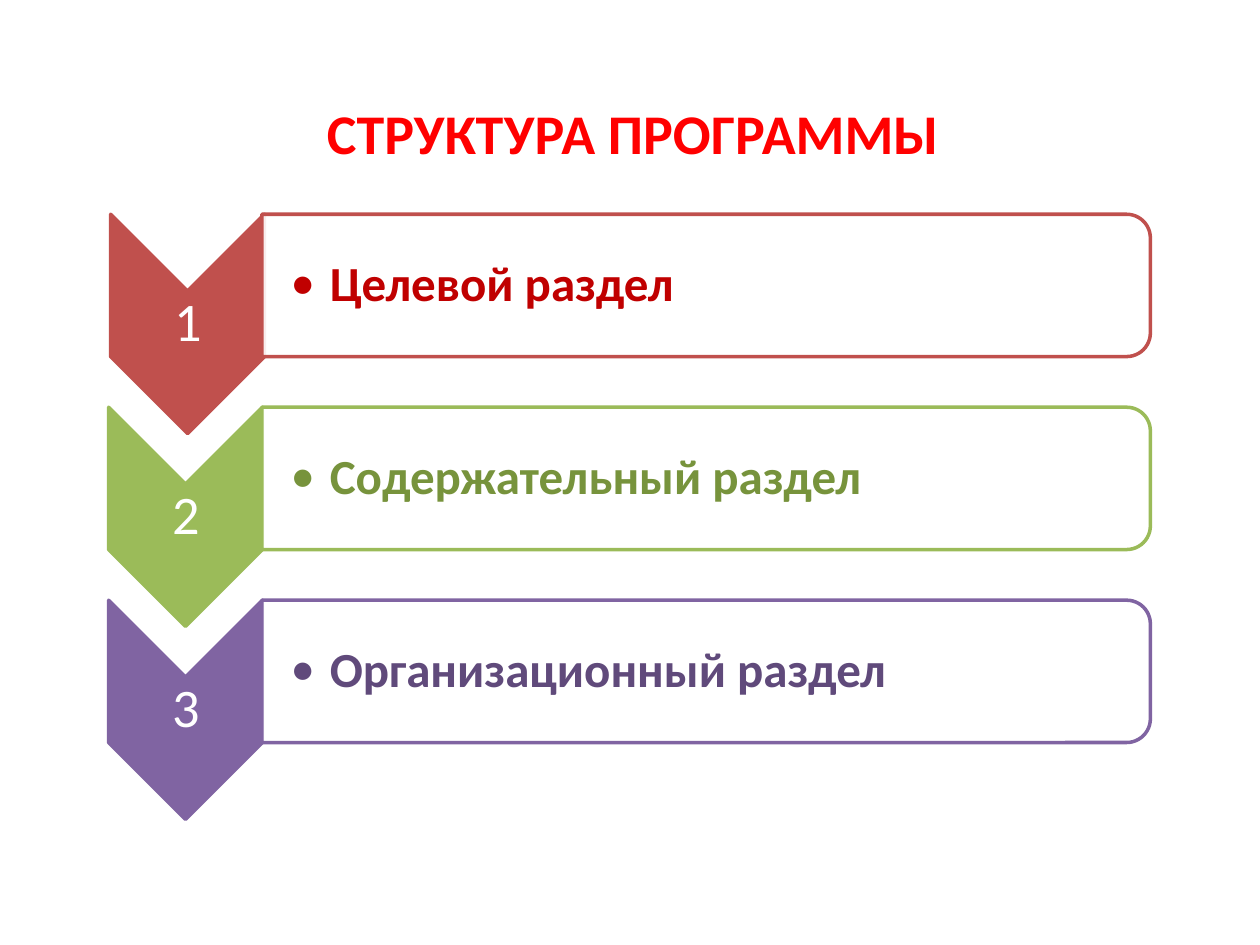
import lxml.etree
import pptx
import pptx.dml.color
import pptx.enum.shapes
import pptx.enum.text
import pptx.oxml.ns
import pptx.util

Cm, Pt = pptx.util.Cm, pptx.util.Pt
SHAPES = pptx.enum.shapes.MSO_SHAPE
ALIGN = pptx.enum.text.PP_ALIGN
qn = pptx.oxml.ns.qn


def color(hex_code):
    return pptx.dml.color.RGBColor.from_string(hex_code)


def add_text(text, left, top, width, height, size, hex_code, bold, align,
             insets=(0.05, 0.05), line_spacing=0.9, bullet=False):
    """Add one vertically centred paragraph; insets are left and other sides, in cm."""
    frame = slide.shapes.add_textbox(Cm(left), Cm(top), Cm(width), Cm(height)).text_frame
    frame.word_wrap = True
    frame.vertical_anchor = pptx.enum.text.MSO_ANCHOR.MIDDLE
    frame.margin_left = Cm(insets[0])
    frame.margin_top = frame.margin_right = frame.margin_bottom = Cm(insets[1])
    frame.text = text
    paragraph = frame.paragraphs[0]
    paragraph.alignment = align
    paragraph.line_spacing = line_spacing
    if bullet:
        paragraph.level = 1
        properties = paragraph._p.get_or_add_pPr()
        properties.set("marL", str(Cm(0.79)))
        properties.set("indent", str(-Cm(0.79)))
        lxml.etree.SubElement(properties, qn("a:buFont"), typeface="Calibri")
        lxml.etree.SubElement(properties, qn("a:buChar"), char="•")
    font = paragraph.runs[0].font
    font.name = "Calibri"
    font.size = Pt(size)
    font.bold = bold
    font.color.rgb = color(hex_code)


presentation = pptx.Presentation()
presentation.slide_width = Cm(25.4)
presentation.slide_height = Cm(19.05)
slide = presentation.slides.add_slide(presentation.slide_layouts[6])

add_text("СТРУКТУРА ПРОГРАММЫ", 1.27, 1.4, 22.86, 2.54, 32, "FF0000", True,
         ALIGN.CENTER, insets=(0.25, 0.13), line_spacing=1)

# name, accent colour, text colour, left edge of the chevron before rotation
sections = [
    ("Целевой раздел", "C0504D", "C00000", 1.57),
    ("Содержательный раздел", "9BBB59", "77933C", 1.53),
    ("Организационный раздел", "8064A2", "604A7B", 1.53),
]
ROW_PITCH = 3.89

for index, (name, accent, text_color, chevron_left) in enumerate(sections):
    offset = index * ROW_PITCH

    chevron = slide.shapes.add_shape(
        SHAPES.CHEVRON, Cm(chevron_left), Cm(4.98 + offset), Cm(4.42), Cm(3.1))
    panel = slide.shapes.add_shape(
        SHAPES.ROUND_2_SAME_RECTANGLE, Cm(12.8), Cm(-3.2 + offset), Cm(2.87), Cm(17.91))
    for shape, fill in ((chevron, accent), (panel, "FFFFFF")):
        shape.rotation = 90
        shape.shadow.inherit = False
        shape.fill.solid()
        shape.fill.fore_color.rgb = color(fill)
        shape.line.color.rgb = color(accent)
        shape.line.width = Pt(2)
    panel_fill = panel._element.spPr.find(qn("a:solidFill"))
    lxml.etree.SubElement(panel_fill[0], qn("a:alpha"), val="90000")

    add_text(str(index + 1), chevron_left + 0.67, 5.87 + offset, 3.1, 1.32, 31,
             "FFFFFF", False, ALIGN.CENTER)
    add_text(name, 5.31, 4.47 + offset, 17.75, 2.59, 28, text_color, True,
             ALIGN.LEFT, insets=(0.55, 0.05), bullet=True)

presentation.save("out.pptx")
